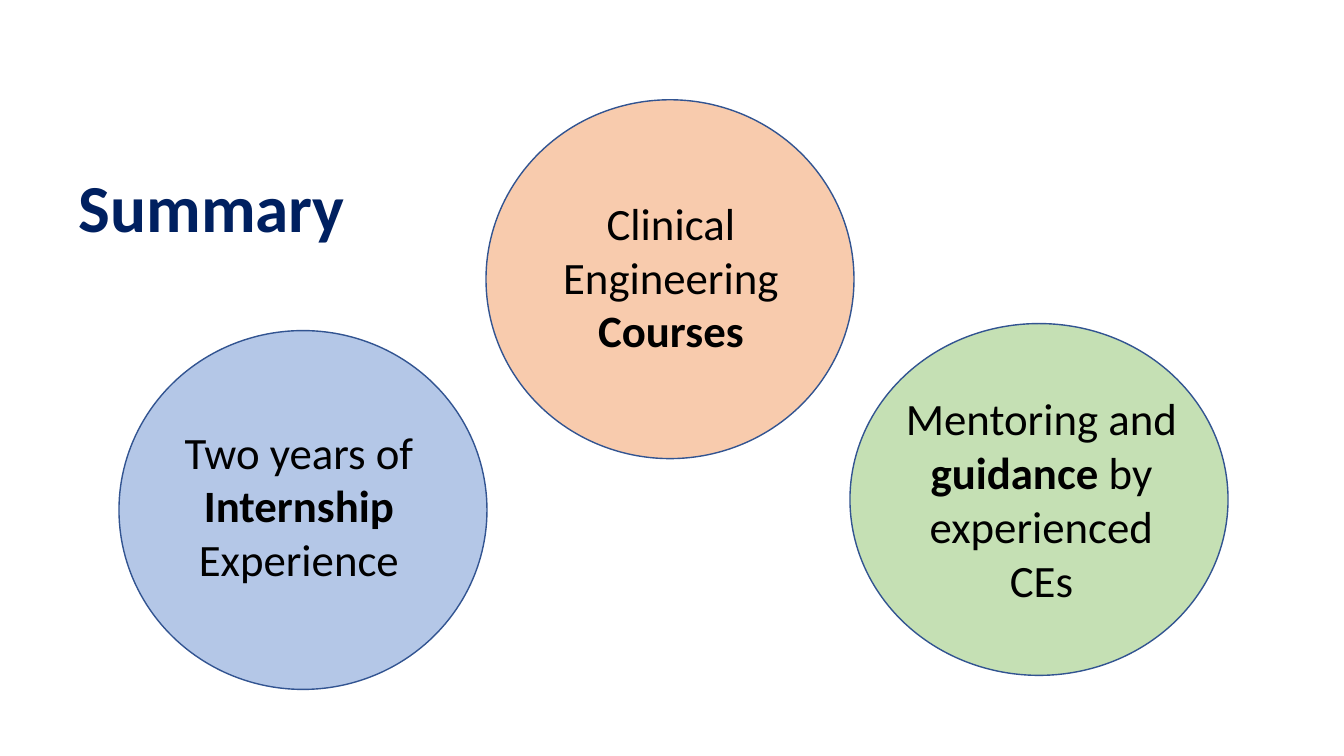
from pptx import Presentation
from pptx import util as u
from pptx.dml.color import RGBColor
from pptx.enum import shapes, text


def colour(hex_value):
    return RGBColor.from_string(hex_value)


class SummarySlide:
    """Holds the style and the current slide."""

    font = "Calibri"
    title_colour = "002060"
    text_colour = "000000"
    outline = "325491"

    def __init__(self, deck):
        self.slide = deck.slides.add_slide(deck.slide_layouts[5])

    def add_run(self, paragraph, words, size, hex_value, bold=False):
        run = paragraph.add_run()
        run.text = words
        run.font.name = self.font
        run.font.size = u.Pt(size)
        run.font.bold = bold
        run.font.color.rgb = colour(hex_value)

    def title(self, words, box):
        heading = self.slide.shapes.title
        heading.left, heading.top, heading.width, heading.height = map(u.Inches, box)
        frame = heading.text_frame
        frame.word_wrap = True
        frame.vertical_anchor = text.MSO_ANCHOR.MIDDLE
        paragraph = frame.paragraphs[0]
        paragraph.alignment = text.PP_ALIGN.LEFT
        paragraph.line_spacing = 0.9
        self.add_run(paragraph, words, 48, self.title_colour, bold=True)

    def circle(self, box, fill):
        disc = self.slide.shapes.add_shape(shapes.MSO_SHAPE.OVAL, *map(u.Inches, box))
        disc.shadow.inherit = False
        disc.fill.solid()
        disc.fill.fore_color.rgb = colour(fill)
        disc.line.color.rgb = colour(self.outline)
        disc.line.width = u.Pt(1)

    def caption(self, box, runs):
        label = self.slide.shapes.add_textbox(*map(u.Inches, box))
        frame = label.text_frame
        frame.word_wrap = True
        frame.auto_size = text.MSO_AUTO_SIZE.SHAPE_TO_FIT_TEXT
        paragraph = frame.paragraphs[0]
        paragraph.alignment = text.PP_ALIGN.CENTER
        for words, bold in runs:
            self.add_run(paragraph, words, 32, self.text_colour, bold)


# Circle box, fill, caption box, caption runs (words, bold)
PILLARS = [
    ((1.18, 3.28, 3.65, 3.56), "B4C7E7", (1.67, 4.16, 2.59, 1.72),
     [("Two years of ", False), ("Internship ", True), ("Experience", False)]),
    ((4.82, 0.99, 3.65, 3.56), "F8CBAD", (5.39, 1.89, 2.53, 1.72),
     [("Clinical Engineering ", False), ("Courses", True)]),
    ((8.43, 3.21, 3.75, 3.49), "C5E0B4", (8.88, 3.83, 2.9, 2.26),
     [("Mentoring and ", False), ("guidance", True), (" by experienced CEs", False)]),
]


def main():
    deck = Presentation()
    deck.slide_width, deck.slide_height = u.Inches(13.33), u.Inches(7.5)
    summary = SummarySlide(deck)

    # Heading
    summary.title("Summary", (0.68, 1.37, 11.5, 1.45))

    # Three pillars
    for circle_box, fill, caption_box, runs in PILLARS:
        summary.circle(circle_box, fill)
        summary.caption(caption_box, runs)

    deck.save("out.pptx")


if __name__ == "__main__":
    main()
